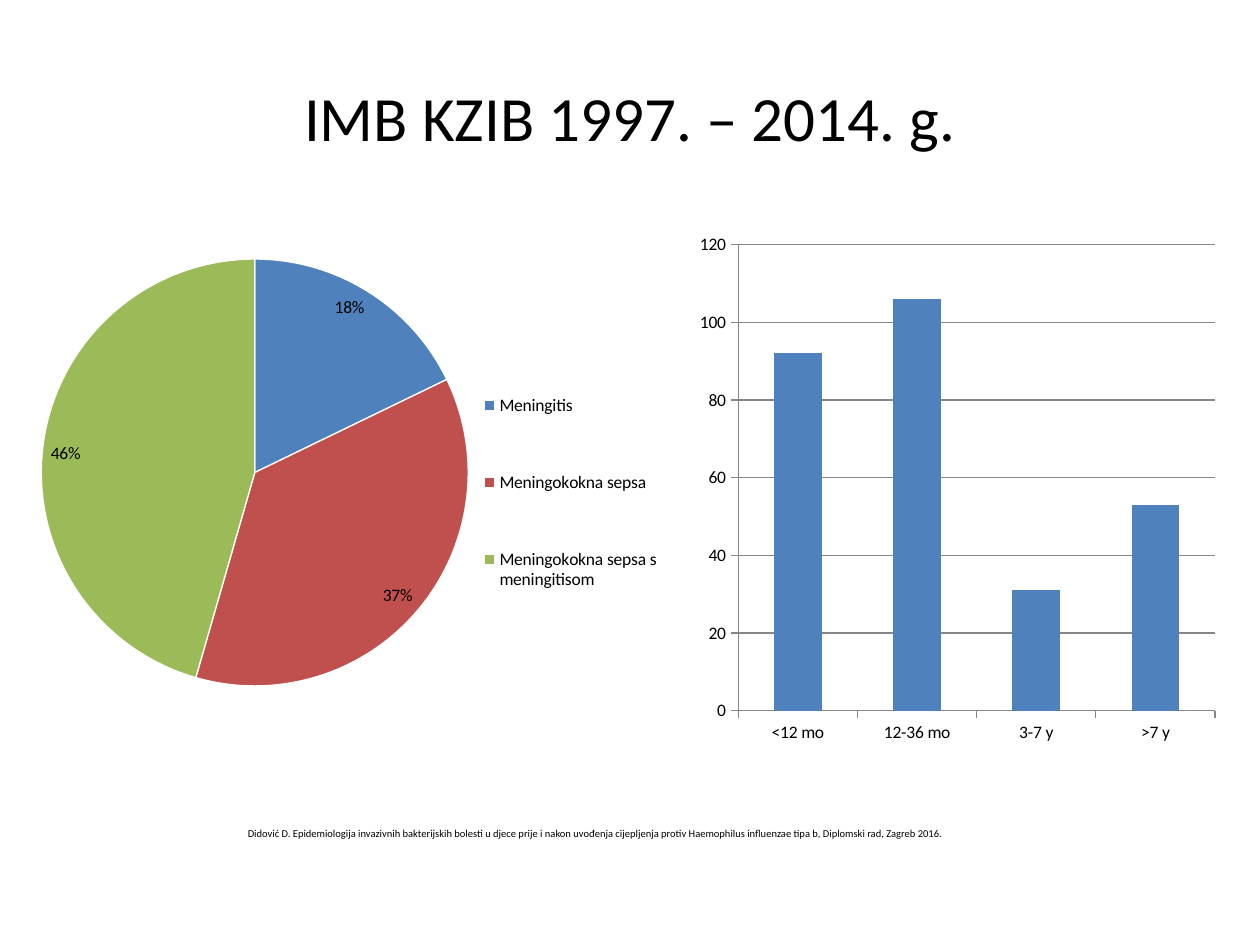
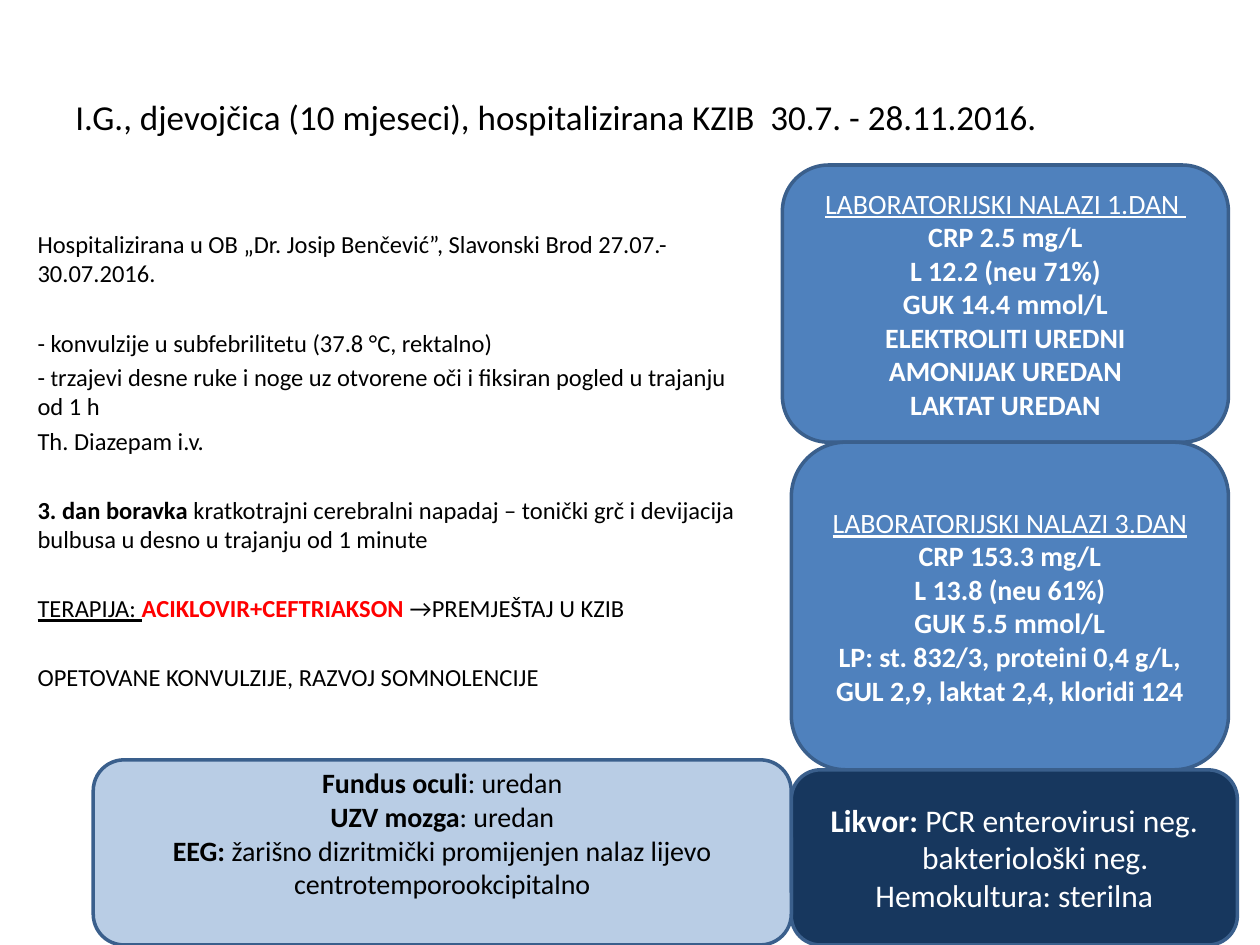
"""Two slides on invasive meningococcal disease: charts and a case report."""
from lxml import etree
from pptx import Presentation
from pptx.chart.data import CategoryChartData
from pptx.dml.color import RGBColor
from pptx.enum import chart as ch, shapes as sh, text as tx
from pptx.oxml.ns import qn
from pptx.util import Pt

BLACK = RGBColor(0, 0, 0)
WHITE = RGBColor(255, 255, 255)
RED = RGBColor(255, 0, 0)
BLUE = RGBColor(0x4F, 0x81, 0xBD)
BRICK = RGBColor(0xC0, 0x50, 0x4D)
GREEN = RGBColor(0x9B, 0xBB, 0x59)
NAVY = RGBColor(0x17, 0x37, 0x5E)
PALE = RGBColor(0xB9, 0xCD, 0xE5)
EDGE = RGBColor(0x3A, 0x5F, 0x8C)
GREY = RGBColor(0x86, 0x86, 0x86)
FONT = "Calibri"
TITLE = [Pt(n) for n in (36, 21.6, 648, 90)]
LEFT, MID = tx.PP_ALIGN.LEFT, tx.PP_ALIGN.CENTER
BOLD, LINED = {"bold": True}, {"underline": True}


def write(shape, paras, size, color=BLACK, align=LEFT, gaps=None):
    frame = shape.text_frame
    frame.word_wrap = True
    frame.vertical_anchor = tx.MSO_ANCHOR.MIDDLE
    for i, runs in enumerate(paras):
        para = frame.paragraphs[0] if i == 0 else frame.add_paragraph()
        para.alignment = align
        para.space_before = Pt(gaps[i] if gaps else 0)
        for words, look in runs:
            run = para.add_run()
            run.text = words
            form = {"name": FONT, "size": Pt(size), **look}
            run.font.color.rgb = form.pop("color", color)
            for key, val in form.items():
                setattr(run.font, key, val)
    return frame


def place(node, spot, box):
    for old in node.findall(qn("c:layout")):
        node.remove(old)
    lay = etree.Element(qn("c:layout"))
    man = etree.SubElement(lay, qn("c:manualLayout"))
    if spot == 0:
        etree.SubElement(man, qn("c:layoutTarget")).set("val", "inner")
    for key in ("xMode", "yMode"):
        etree.SubElement(man, qn("c:" + key)).set("val", "edge")
    for key, val in zip("xywh", box):
        etree.SubElement(man, qn("c:" + key)).set("val", str(val))
    node.insert(spot, lay)


deck = Presentation()
deck.slide_width, deck.slide_height = Pt(720), Pt(540)
heads = [
    ("IMB KZIB 1997. – 2014. g.", 36, MID),
    ("I.G., djevojčica (10 mjeseci), hospitalizirana KZIB  30.7. - 28.11.2016.", 20, LEFT),
]
pages = []
for words, size, align in heads:
    page = deck.slides.add_slide(deck.slide_layouts[6])
    write(page.shapes.add_textbox(*TITLE), [[(words, {})]], size, align=align)
    pages.append(page)
stats, case = pages

plots = [
    (ch.XL_CHART_TYPE.PIE, (12.2, 128.2, 375.8, 283.7),
     {"Meningitis": 18, "Meningokokna sepsa": 37, "Meningokokna sepsa s meningitisom": 46}),
    (ch.XL_CHART_TYPE.COLUMN_STACKED, (393.8, 128.2, 306.7, 302.4),
     {"<12 mo": 92, "12-36 mo": 106, "3-7 y": 31, ">7 y": 53}),
]
charts = []
for kind, box, vals in plots:
    data = CategoryChartData()
    data.categories = list(vals)
    data.add_series("Series 1", list(vals.values()))
    chart = stats.shapes.add_chart(kind, *[Pt(n) for n in box], data).chart
    chart.has_title = chart.has_legend = False
    chart.font.name, chart.font.size = FONT, Pt(10)
    chart.font.color.rgb = BLACK
    charts.append(chart)
pie, bars = charts

plot = pie.plots[0]
for i, color in enumerate((BLUE, BRICK, GREEN)):
    form = plot.series[0].points[i].format
    form.fill.solid()
    form.fill.fore_color.rgb = color
    form.line.color.rgb = WHITE
    form.line.width = Pt(0.75)
plot.has_data_labels = True
marks = plot.data_labels
form = {"show_percentage": True, "show_value": False, "number_format": "0%",
        "number_format_is_linked": False, "position": ch.XL_LABEL_POSITION.INSIDE_END}
for key, val in form.items():
    setattr(marks, key, val)
pie.has_legend = True
pie.legend.position = ch.XL_LEGEND_POSITION.RIGHT
pie.legend.include_in_layout = False
area = plot.series[0].format and pie.element.find(".//" + qn("c:plotArea"))
place(area, 0, (0.03, 0.07, 0.65, 0.86))
place(pie.element.find(".//" + qn("c:legend")), 1, (0.68, 0.23, 0.31, 0.62))

plot = bars.plots[0]
plot.gap_width, plot.overlap, plot.vary_by_categories = 150, 100, False
fill = plot.series[0].format.fill
fill.solid()
fill.fore_color.rgb = BLUE
bars.value_axis.has_major_gridlines = True
for axis in (bars.category_axis, bars.value_axis):
    axis.major_tick_mark = ch.XL_TICK_MARK.OUTSIDE
    axis.format.line.color.rgb = GREY
bars.value_axis.major_gridlines.format.line.color.rgb = GREY

cite = stats.shapes.add_textbox(Pt(134.5), Pt(468.7), Pt(447), Pt(15))
write(cite, [[("Didović D. Epidemiologija invazivnih bakterijskih bolesti u djece prije i nakon "
               "uvođenja cijepljenja protiv Haemophilus influenzae tipa b, Diplomski rad, "
               "Zagreb 2016.", {})]], 6).word_wrap = False

story = [
    (0, [("Hospitalizirana u OB „Dr. Josip Benčević”, Slavonski Brod 27.07.-30.07.2016.", {})]),
    (22.7, [("- konvulzije u subfebrilitetu (37.8 °C, rektalno)", {})]),
    (2.8, [("- ", {}), ("t", {"size": Pt(13)}),
           ("rzajevi desne ruke i noge uz otvorene oči i fiksiran pogled u trajanju od 1 h", {})]),
    (2.8, [("Th. Diazepam i.v.", {})]),
    (22.7, [("3. dan boravka ", BOLD),
            ("kratkotrajni cerebralni napadaj – tonički grč i devijacija bulbusa u desno "
             "u trajanju od 1 minute", {})]),
    (22.7, [("TERAPIJA: ", LINED), ("ACIKLOVIR+CEFTRIAKSON", {"bold": True, "color": RED}),
            (" →PREMJEŠTAJ U KZIB", {})]),
    (22.7, [("OPETOVANE KONVULZIJE, RAZVOJ SOMNOLENCIJE", {})]),
]
body = case.shapes.add_textbox(Pt(14.4), Pt(127.3), Pt(414.7), Pt(335))
frame = write(body, [runs for gap, runs in story], 14, gaps=[gap for gap, runs in story])
frame.vertical_anchor = tx.MSO_ANCHOR.TOP

labs = [
    ["LABORATORIJSKI NALAZI 1.DAN ", "CRP 2.5 mg/L", "L 12.2 (neu 71%)", "GUK 14.4 mmol/L",
     "ELEKTROLITI UREDNI", "AMONIJAK UREDAN", "LAKTAT UREDAN"],
    ["LABORATORIJSKI NALAZI 3.DAN", "CRP 153.3 mg/L", "L 13.8 (neu 61%)", "GUK 5.5 mmol/L",
     "LP: st. 832/3, proteini 0,4 g/L, GUL 2,9, laktat 2,4, kloridi 124"],
]
first, third = [[[(line, BOLD if i else LINED)] for i, line in enumerate(lab)] for lab in labs]
fluid = [[("Likvor: ", BOLD), ("PCR enterovirusi neg.", {})],
         [("bakteriološki neg.", {})], [("Hemokultura: sterilna", {})]]
exams = [[("Fundus oculi", BOLD), (": uredan", {})], [("UZV mozga", BOLD), (": uredan", {})],
         [("EEG: ", BOLD),
          ("žarišno dizritmički promijenjen nalaz lijevo centrotemporookcipitalno", {})]]
cards = [
    ((447.1, 94.3, 254.9, 158.4), BLUE, WHITE, 16, first),
    ((452.2, 252.7, 249.8, 187.2), BLUE, WHITE, 16, third),
    ((452.2, 439.9, 254.9, 100.1), NAVY, WHITE, 18, fluid),
    ((53.3, 434.2, 398.9, 105.8), PALE, BLACK, 16, exams),
]
frames = []
for box, back, ink, size, paras in cards:
    card = case.shapes.add_shape(sh.MSO_SHAPE.ROUNDED_RECTANGLE, *[Pt(n) for n in box])
    card.shadow.inherit = False
    card.fill.solid()
    card.fill.fore_color.rgb = back
    card.line.color.rgb = EDGE
    card.line.width = Pt(2)
    frames.append(write(card, paras, size, ink, MID))
frames[2].paragraphs[1]._p.get_or_add_pPr().set("marL", str(Pt(24)))
frames[3].margin_bottom = Pt(25.6)

deck.save("out.pptx")
